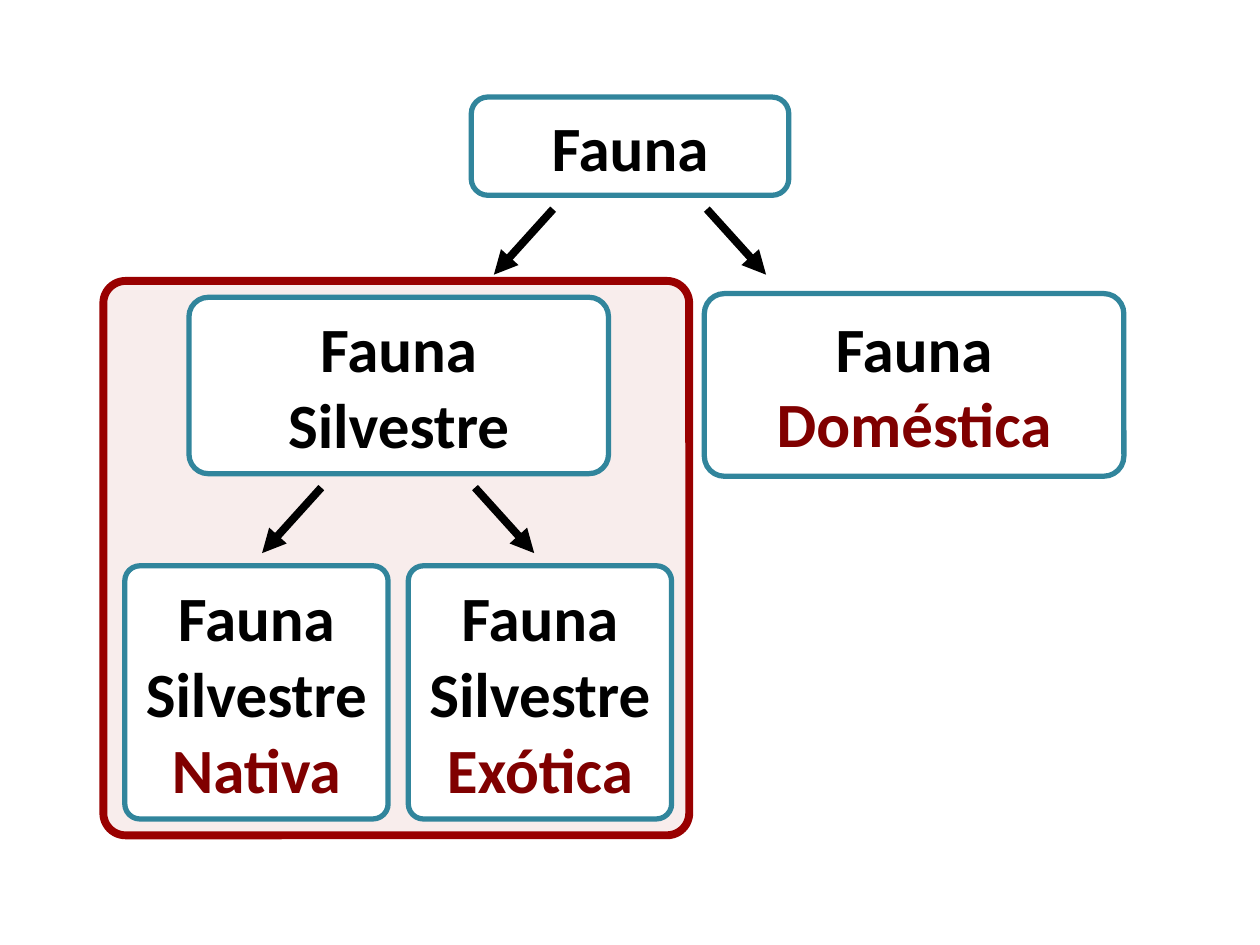
from pptx import Presentation
from pptx.dml.color import RGBColor
from pptx.enum.shapes import MSO_CONNECTOR, MSO_SHAPE
from pptx.enum.text import MSO_ANCHOR, PP_ALIGN
from pptx.oxml.ns import qn
from pptx.util import Pt
from lxml import etree

PX = 9144  # EMU per px, 100 px to the inch
ROUNDED = MSO_SHAPE.ROUNDED_RECTANGLE
STRAIGHT = MSO_CONNECTOR.STRAIGHT
CENTER = PP_ALIGN.CENTER
MIDDLE = MSO_ANCHOR.MIDDLE

BLACK = RGBColor(0x00, 0x00, 0x00)
WHITE = RGBColor(0xFF, 0xFF, 0xFF)
TEAL = RGBColor(0x31, 0x85, 0x9C)
MAROON = RGBColor(0x80, 0x00, 0x00)
RED = RGBColor(0x99, 0x00, 0x00)
PINK = RGBColor(0xF2, 0xDC, 0xDB)

LABEL_FONT = {"name": "Calibri", "size": Pt(36), "bold": True}

# Left, top, width, height, corner ratio, black text, maroon text
NODES = [
    (374, 77, 252, 78, 0.17, "Fauna", ""),
    (559, 233, 333, 145, 0.11, "Fauna ", "Doméstica"),
    (150, 236, 333, 140, 0.11, "Fauna Silvestre", ""),
    (99, 449, 209, 201, 0.06, "Fauna Silvestre ", "Nativa"),
    (324, 449, 209, 201, 0.06, "Fauna Silvestre ", "Exótica"),
]

# Middle and top of each pair of arrows
FORKS = [(500, 166), (316, 387)]
FORK_INNER, FORK_OUTER, FORK_HEIGHT = 61, 108, 52


def add_rounded(page, left, top, width, height, corner, fill, line, weight):
    box = page.shapes.add_shape(
        ROUNDED, left * PX, top * PX, width * PX, height * PX)
    box.adjustments[0] = corner
    box.shadow.inherit = False
    box.fill.solid()
    box.fill.fore_color.rgb = fill
    box.line.color.rgb = line
    box.line.width = Pt(weight)
    return box


def add_group_frame(page):
    frame = add_rounded(page, 82, 223, 465, 440, 0.04, PINK, RED, 4.5)
    # Half-transparent fill
    color = frame.fill._xPr.find(qn("a:solidFill"))[0]
    etree.SubElement(color, qn("a:alpha"), val="50000")


def add_node(page, left, top, width, height, corner, text, accent):
    box = add_rounded(page, left, top, width, height, corner, WHITE, TEAL, 3)
    frame = box.text_frame
    frame.word_wrap = True
    frame.vertical_anchor = MIDDLE
    para = frame.paragraphs[0]
    para.alignment = CENTER
    for words, color in ((text, BLACK), (accent, MAROON)):
        if words:
            span = para.add_run()
            span.text = words
            for key, value in LABEL_FONT.items():
                setattr(span.font, key, value)
            span.font.color.rgb = color


def add_arrow(page, x1, y1, x2, y2):
    arrow = page.shapes.add_connector(
        STRAIGHT, x1 * PX, y1 * PX, x2 * PX, y2 * PX)
    arrow.line.color.rgb = BLACK
    arrow.line.width = Pt(4.5)
    etree.SubElement(arrow.line._get_or_add_ln(), qn("a:tailEnd"),
                     type="triangle")
    etree.SubElement(arrow._element.spPr, qn("a:effectLst"))


def add_fork(page, middle, top):
    for side in (-1, 1):
        add_arrow(page, middle + side * FORK_INNER, top,
                  middle + side * FORK_OUTER, top + FORK_HEIGHT)


def main():
    deck = Presentation()
    deck.slide_width, deck.slide_height = 1000 * PX, 750 * PX
    page = deck.slides.add_slide(deck.slide_layouts[6])

    # Frame around the wild fauna branch
    add_group_frame(page)
    # Boxes of the tree
    for node in NODES:
        add_node(page, *node)
    # Arrows between levels
    for fork in FORKS:
        add_fork(page, *fork)

    deck.save("out.pptx")


if __name__ == "__main__":
    main()
